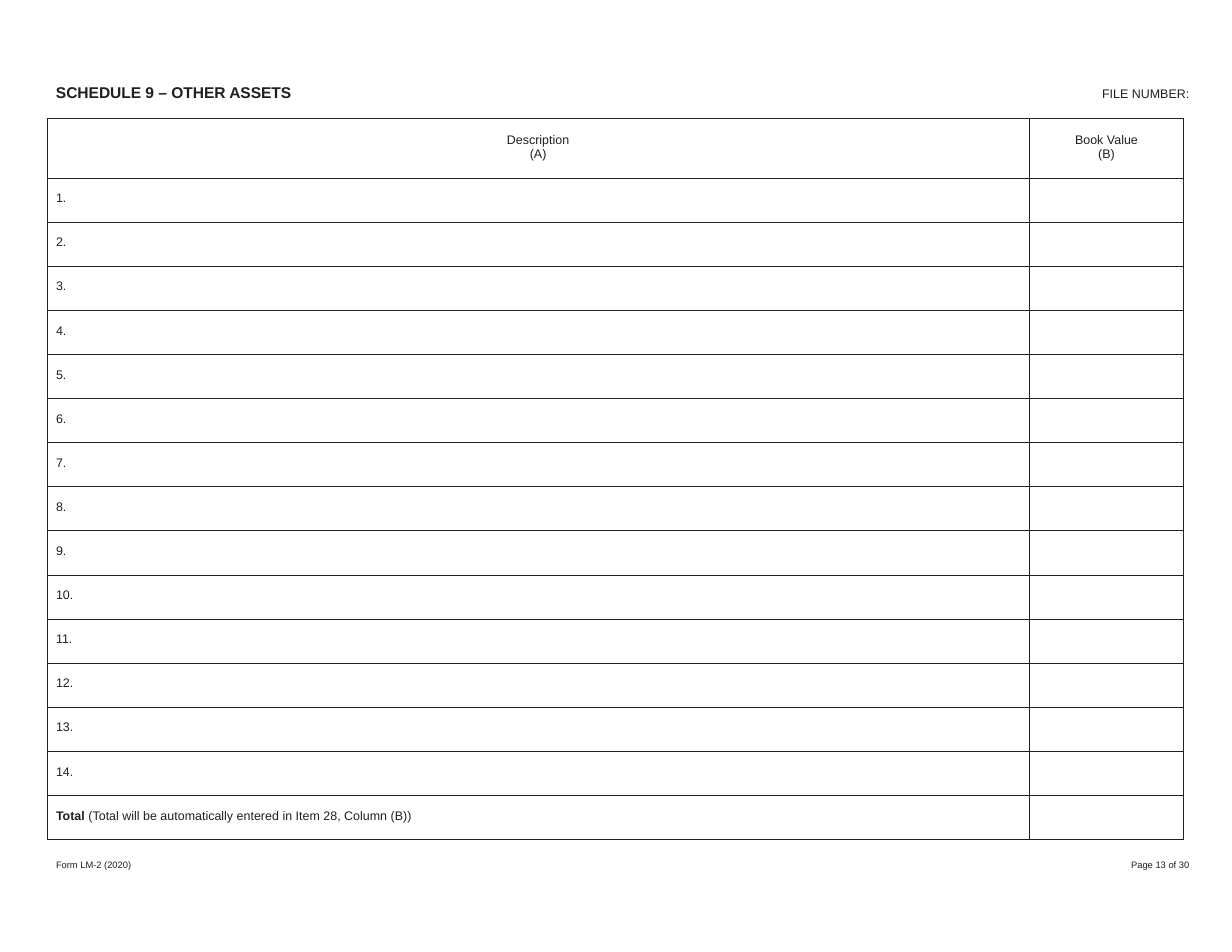
from dataclasses import dataclass

from lxml import etree
from pptx import Presentation
from pptx import util as u
from pptx.dml.color import RGBColor
from pptx.enum import text
from pptx.oxml import ns

INK = RGBColor(0x23, 0x1F, 0x20)
FONT = "Arial"
ITEM_COUNT = 14
HEADER_HEIGHT = 0.53
BODY_HEIGHT = 5.91
COLUMN_WIDTHS = (8.77, 1.38)


@dataclass(frozen=True)
class Label:
    left: float
    top: float
    width: float
    height: float
    words: str
    size: float
    bold: bool = False


LABELS = (
    Label(0.5, 0.74, 2.3, 0.18, "SCHEDULE 9 – OTHER ASSETS", 10, True),
    Label(9.84, 0.77, 0.9, 0.16, "FILE NUMBER:", 8),
    Label(0.5, 7.67, 1.81, 0.11, "Form LM-2 (2020)", 6),
    Label(10.1, 7.67, 0.6, 0.11, "Page 13 of 30", 6),
)
HEADINGS = (("Description", "(A)"), ("Book Value", "(B)"))


def add_run(p, words: str, size: float, bold: bool = False) -> None:
    r = p.add_run()
    r.text = words
    r.font.name = FONT
    r.font.size = u.Pt(size)
    r.font.bold = bold
    r.font.color.rgb = INK


def add_label(s, label: Label) -> None:
    sp = s.shapes.add_textbox(
        u.Inches(label.left), u.Inches(label.top), u.Inches(label.width), u.Inches(label.height)
    )
    tf = sp.text_frame
    tf.word_wrap = True
    tf.margin_left = tf.margin_right = tf.margin_top = tf.margin_bottom = 0
    add_run(tf.paragraphs[0], label.words, label.size, label.bold)


def style_cell(cell) -> None:
    cell.margin_left = u.Inches(0.08)
    cell.margin_right = cell.margin_top = 0
    cell.margin_bottom = u.Inches(0.03)
    cell.vertical_anchor = text.MSO_ANCHOR.MIDDLE
    tc_pr = cell._tc.get_or_add_tcPr()
    for side in ("lnL", "lnR", "lnT", "lnB"):
        ln = etree.SubElement(tc_pr, ns.qn(f"a:{side}"), w=str(u.Pt(0.5)))
        fill = etree.SubElement(ln, ns.qn("a:solidFill"))
        etree.SubElement(fill, ns.qn("a:srgbClr"), val=str(INK))
    cell.fill.background()


def add_assets_table(s) -> None:
    row_count = ITEM_COUNT + 2
    table = s.shapes.add_table(
        row_count, len(COLUMN_WIDTHS), u.Inches(0.42), u.Inches(1.06),
        u.Inches(sum(COLUMN_WIDTHS)), u.Inches(HEADER_HEIGHT + BODY_HEIGHT),
    ).table
    table.horz_banding = False
    for column, width in zip(table.columns, COLUMN_WIDTHS):
        column.width = u.Inches(width)
    for i, row in enumerate(table.rows):
        row.height = u.Inches(BODY_HEIGHT / (row_count - 1) if i else HEADER_HEIGHT)
        for cell in row.cells:
            style_cell(cell)

    for i, (title, letter) in enumerate(HEADINGS):
        cell = table.cell(0, i)
        cell.margin_left = 0
        p = cell.text_frame.paragraphs[0]
        p.alignment = text.PP_ALIGN.CENTER
        add_run(p, title, 8)
        p.add_line_break()
        add_run(p, letter, 8)

    for number in range(1, ITEM_COUNT + 1):
        add_run(table.cell(number, 0).text_frame.paragraphs[0], f"{number}.", 8)

    p = table.cell(row_count - 1, 0).text_frame.paragraphs[0]
    add_run(p, "Total ", 8, True)
    add_run(p, "(Total will be automatically entered in Item 28, Column (B))", 8)


def main() -> None:
    prs = Presentation()
    prs.slide_width = u.Inches(11)
    prs.slide_height = u.Inches(8.5)
    s = prs.slides.add_slide(prs.slide_layouts[6])
    for label in LABELS:
        add_label(s, label)
    add_assets_table(s)
    prs.save("out.pptx")


if __name__ == "__main__":
    main()
